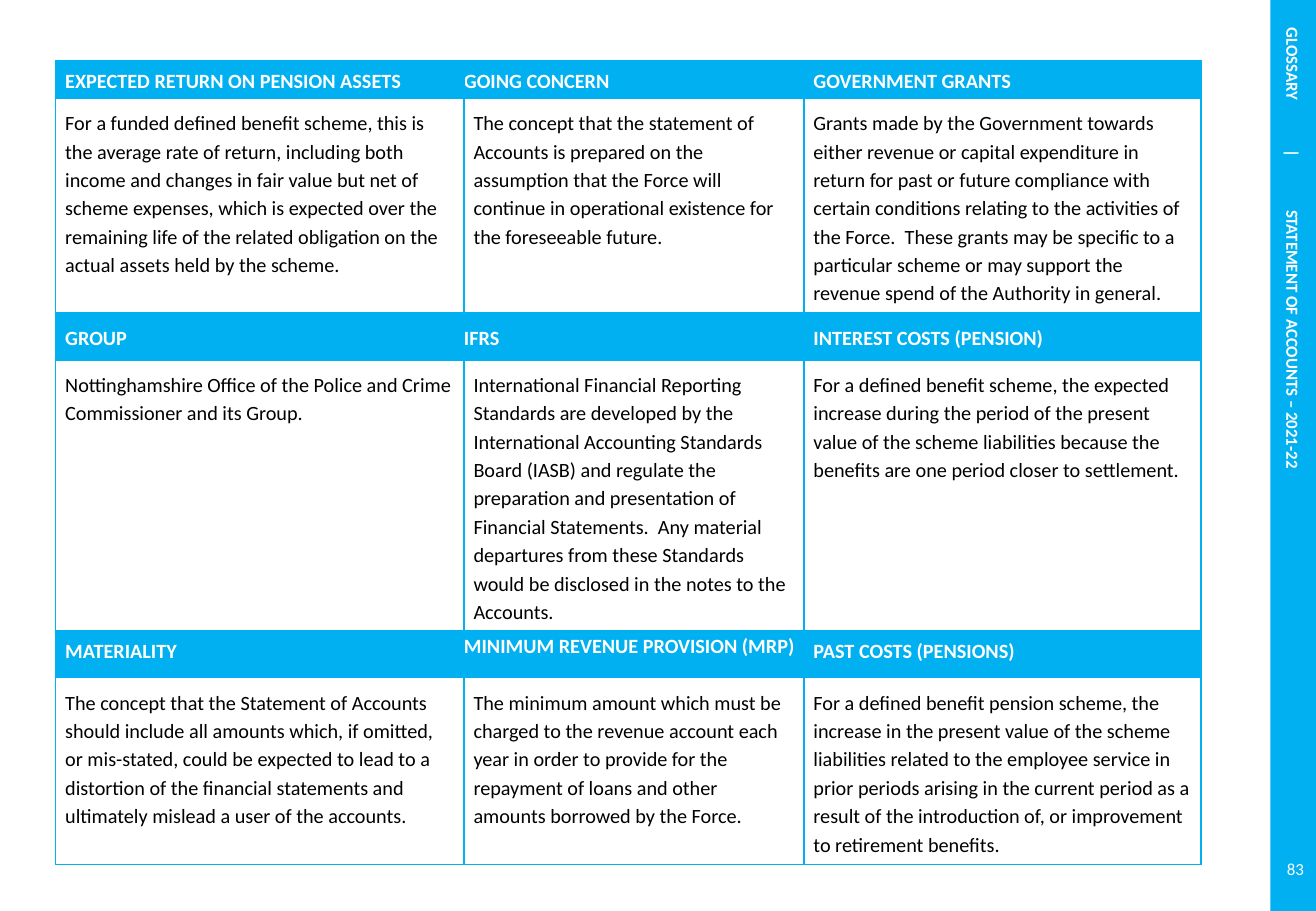
from dataclasses import dataclass

from pptx import Presentation
from pptx.dml.color import RGBColor
from pptx.enum.shapes import MSO_SHAPE
from pptx.enum.text import MSO_ANCHOR, PP_ALIGN
from pptx.oxml import parse_xml
from pptx.oxml.ns import nsdecls
from pptx.util import Pt


@dataclass(frozen=True)
class Theme:
    font: str = "Calibri"
    blue: RGBColor = RGBColor(0x00, 0xB0, 0xF0)
    white: RGBColor = RGBColor(0xFF, 0xFF, 0xFF)
    black: RGBColor = RGBColor(0x00, 0x00, 0x00)
    table_size: float = 12
    margin_size: float = 10


@dataclass(frozen=True)
class Entry:
    term: str
    meaning: str


THEME = Theme()
COLUMN_WIDTHS = (242, 201.5, 235.5)
HEADING_HEIGHTS = (20, 28, 28)
MEANING_HEIGHTS = (107.5, 96.5, 93.5)
HEADING_ANCHORS = (
    (MSO_ANCHOR.TOP, MSO_ANCHOR.MIDDLE, MSO_ANCHOR.MIDDLE),
    (MSO_ANCHOR.MIDDLE,) * 3,
    (MSO_ANCHOR.TOP,) * 3,
)
GLOSSARY = (
    (
        Entry("EXPECTED RETURN ON PENSION ASSETS",
              "For a funded defined benefit scheme, this is the average rate of return, including both income "
              "and changes in fair value but net of scheme expenses, which is expected over the remaining life "
              "of the related obligation on the actual assets held by the scheme."),
        Entry("GOING CONCERN",
              "The concept that the statement of Accounts is prepared on the assumption that the Force will "
              "continue in operational existence for the foreseeable future."),
        Entry("GOVERNMENT GRANTS",
              "Grants made by the Government towards either revenue or capital expenditure in return for past "
              "or future compliance with certain conditions relating to the activities of the Force.  These "
              "grants may be specific to a particular scheme or may support the revenue spend of the Authority "
              "in general."),
    ),
    (
        Entry("GROUP",
              "Nottinghamshire Office of the Police and Crime Commissioner and its Group."),
        Entry("IFRS",
              "International Financial Reporting Standards are developed by the International Accounting "
              "Standards Board (IASB) and regulate the preparation and presentation of Financial Statements.  "
              "Any material departures from these Standards would be disclosed in the notes to the Accounts."),
        Entry("INTEREST COSTS (PENSION)",
              "For a defined benefit scheme, the expected increase during the period of the present value of "
              "the scheme liabilities because the benefits are one period closer to settlement."),
    ),
    (
        Entry("MATERIALITY",
              "The concept that the Statement of Accounts should include all amounts which, if omitted, or "
              "mis-stated, could be expected to lead to a distortion of the financial statements and ultimately "
              "mislead a user of the accounts."),
        Entry("MINIMUM REVENUE PROVISION (MRP)",
              "The minimum amount which must be charged to the revenue account each year in order to provide "
              "for the repayment of loans and other amounts borrowed by the Force."),
        Entry("PAST COSTS (PENSIONS)",
              "For a defined benefit pension scheme, the increase in the present value of the scheme "
              "liabilities related to the employee service in prior periods arising in the current period as a "
              "result of the introduction of, or improvement to retirement benefits."),
    ),
)


def format_runs(paragraph, size: float, color: RGBColor, bold: bool = False) -> None:
    for span in paragraph.runs:
        span.font.name = THEME.font
        span.font.size = Pt(size)
        span.font.bold = bold
        span.font.color.rgb = color


def add_borders(cell) -> None:
    properties = cell._tc.get_or_add_tcPr()
    for position, side in enumerate(("lnL", "lnR", "lnT", "lnB")):
        properties.insert(position, parse_xml(
            f'<a:{side} {nsdecls("a")} w="{Pt(1)}"><a:solidFill>'
            f'<a:srgbClr val="{THEME.blue}"/></a:solidFill></a:{side}>'))


def fill_cell(cell, text: str, heading: bool, side: float, edge: float, anchor: MSO_ANCHOR) -> None:
    cell.margin_left = cell.margin_right = Pt(side)
    cell.margin_top = cell.margin_bottom = Pt(edge)
    cell.vertical_anchor = anchor
    if heading:
        cell.fill.solid()
        cell.fill.fore_color.rgb = THEME.blue
    else:
        cell.fill.background()
    add_borders(cell)
    cell.text_frame.text = text
    paragraph = cell.text_frame.paragraphs[0]
    paragraph.line_spacing = 1.15
    paragraph.space_after = Pt(10)
    format_runs(paragraph, THEME.table_size, THEME.white if heading else THEME.black, heading)


def add_glossary(page) -> None:
    frame = page.shapes.add_table(2 * len(GLOSSARY), len(COLUMN_WIDTHS), Pt(33), Pt(36), Pt(679), Pt(473))
    table = frame.table
    table.first_row = table.horz_banding = False
    for column, width in zip(table.columns, COLUMN_WIDTHS):
        column.width = Pt(width)
    for group, entries in enumerate(GLOSSARY):
        table.rows[2 * group].height = Pt(HEADING_HEIGHTS[group])
        table.rows[2 * group + 1].height = Pt(MEANING_HEIGHTS[group])
        for column, entry in enumerate(entries):
            flush = column == 1
            fill_cell(table.cell(2 * group, column), entry.term, True,
                      0 if flush else 5.67, 0 if flush else 2.83, HEADING_ANCHORS[group][column])
            fill_cell(table.cell(2 * group + 1, column), entry.meaning, False, 5.67, 5.67, MSO_ANCHOR.TOP)
    frame.height = Pt(473)


def add_sidebar(page) -> None:
    bar = page.shapes.add_shape(MSO_SHAPE.RECTANGLE, Pt(753), Pt(-0.5), Pt(27), Pt(541))
    bar.shadow.inherit = False
    bar.fill.solid()
    bar.fill.fore_color.rgb = THEME.blue
    bar.line.fill.background()
    bar.text_frame.vertical_anchor = MSO_ANCHOR.MIDDLE
    bar.text_frame._txBody.bodyPr.set("vert", "vert")
    bar.text_frame.text = "GLOSSARY\t|\tSTATEMENT OF ACCOUNTS – 2021-22"
    paragraph = bar.text_frame.paragraphs[0]
    paragraph.alignment = PP_ALIGN.LEFT
    properties = paragraph._p.get_or_add_pPr()
    properties.set("marL", str(Pt(10)))
    properties.set("indent", "0")
    stops = "".join(f'<a:tab pos="{Pt(stop)}" algn="l"/>' for stop in (62, 82))
    properties.append(parse_xml(f'<a:tabLst {nsdecls("a")}>{stops}</a:tabLst>'))
    format_runs(paragraph, THEME.margin_size, THEME.white, True)


def add_page_number(page) -> None:
    box = page.shapes.add_textbox(Pt(755.5), Pt(500.5), Pt(24.5), Pt(29))
    box.text_frame.word_wrap = True
    box.text_frame.vertical_anchor = MSO_ANCHOR.MIDDLE
    box.text_frame.text = "83"
    paragraph = box.text_frame.paragraphs[0]
    paragraph.alignment = PP_ALIGN.RIGHT
    format_runs(paragraph, THEME.margin_size, THEME.white)


def main() -> None:
    deck = Presentation()
    deck.slide_width = Pt(780)
    deck.slide_height = Pt(540)
    page = deck.slides.add_slide(deck.slide_layouts[6])
    add_sidebar(page)
    add_page_number(page)
    add_glossary(page)
    deck.save("out.pptx")


if __name__ == "__main__":
    main()
